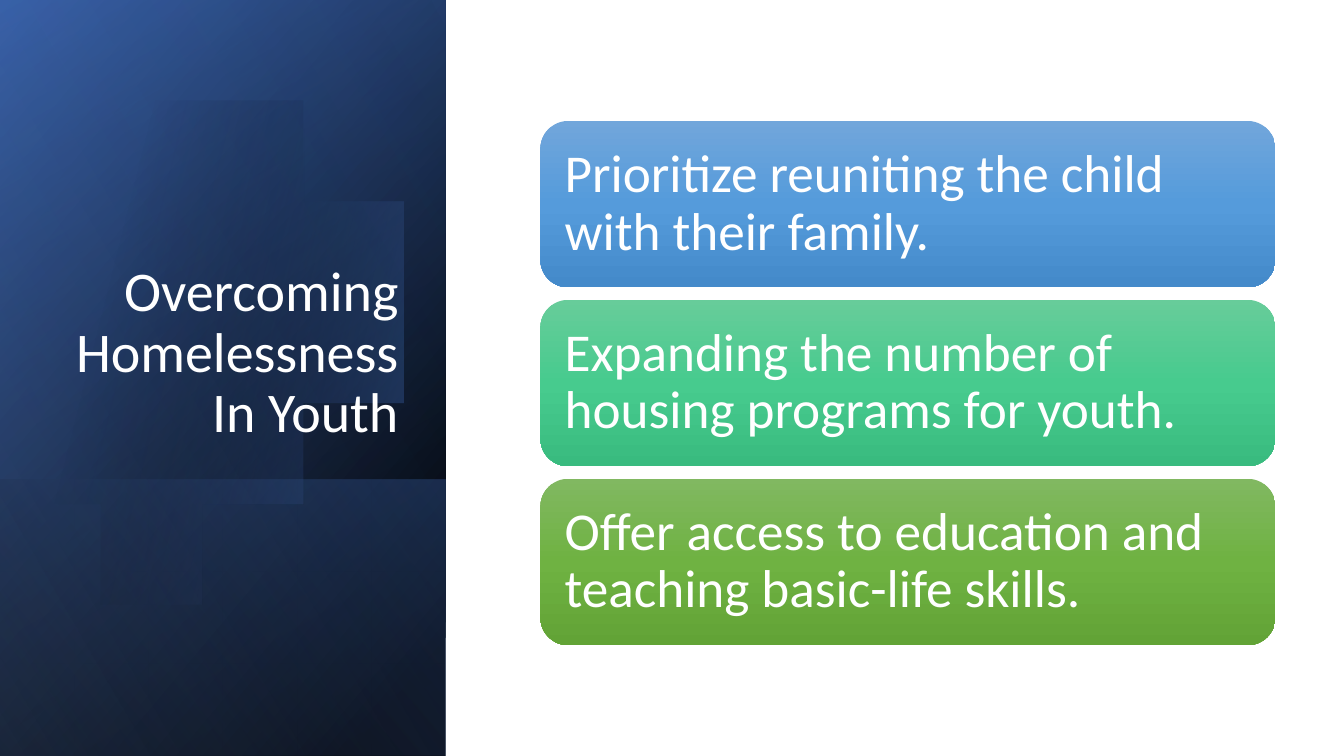
import math

import lxml.etree
import pptx
import pptx.dml.color
import pptx.enum.shapes
import pptx.enum.text
import pptx.oxml.ns
import pptx.util

SLIDE_W, SLIDE_H = 13.33, 7.5
SIDEBAR_W = 4.42
FONT = "Calibri"
WHITE = "FFFFFF"
SHAPES = pptx.enum.shapes.MSO_SHAPE
ALIGN = pptx.enum.text.PP_ALIGN
ANCHOR = pptx.enum.text.MSO_ANCHOR

CARD_LEFT, CARD_TOP, CARD_W, CARD_H = 5.36, 1.2, 7.29, 1.65
CARD_PITCH = 1.775
CARDS = [
    ("Prioritize reuniting the child with their family.",
     ("71A6DB", "559BDB", "448ACA")),
    ("Expanding the number of housing programs for youth.",
     ("67CC9A", "47CB8E", "39BB7F")),
    ("Offer access to education and teaching basic-life skills.",
     ("81B861", "6FB242", "62A336")),
]


def inches(*lengths):
    return [pptx.util.Inches(length) for length in lengths]


def rgb(color):
    return pptx.dml.color.RGBColor.from_string(color)


def set_gradient(sp, stops, angle):
    """Fill with (position %, colour, opacity %) stops; the angle runs clockwise."""
    qn = pptx.oxml.ns.qn
    sp.shadow.inherit = False
    sp.line.fill.background()
    sp.fill.gradient()
    sp.fill.gradient_angle = -angle % 360
    stop_list = sp._element.spPr.find(qn("a:gradFill")).find(qn("a:gsLst"))
    for stop in list(stop_list):
        stop_list.remove(stop)
    for position, color, opacity in stops:
        stop = lxml.etree.SubElement(stop_list, qn("a:gs"), pos=str(position * 1000))
        clr = lxml.etree.SubElement(stop, qn("a:srgbClr"), val=color)
        if opacity < 100:
            lxml.etree.SubElement(clr, qn("a:alpha"), val=str(opacity * 1000))


def set_text(sp, text, size, align, anchor, margins):
    tf = sp.text_frame
    tf.text = text
    tf.word_wrap = True
    tf.vertical_anchor = anchor
    tf.margin_left, tf.margin_top, tf.margin_right, tf.margin_bottom = inches(*margins)
    p = tf.paragraphs[0]
    p.alignment = align
    p.line_spacing = 0.9
    font = p.runs[0].font
    font.name, font.size = FONT, pptx.util.Pt(size)
    font.color.rgb = rgb(WHITE)


def add_sidebar_layer(slide, top, stops, angle):
    """Cover the sidebar from top to the slide's foot with a mirrored, turned rectangle."""
    height = SLIDE_H - top
    left = (SIDEBAR_W - height) / 2
    sp = slide.shapes.add_shape(
        SHAPES.RECTANGLE, *inches(left, top + (height - SIDEBAR_W) / 2, height, SIDEBAR_W))
    sp.rotation = 90
    sp._element.spPr.xfrm.set("flipH", "1")
    set_gradient(sp, stops, angle)


def add_clipped_circle(slide, cx, cy, radius, stops, angle):
    """Draw the part of a circle that lies right of the slide's left edge."""
    reach = math.acos(-cx / radius)
    steps = 120
    turns = [reach * (2 * i / steps - 1) for i in range(steps + 1)]
    points = [(cx + radius * math.cos(t), cy + radius * math.sin(t)) for t in turns]
    builder = slide.shapes.build_freeform(*points[0], scale=pptx.util.Inches(1))
    builder.add_line_segments(points[1:], close=True)
    set_gradient(builder.convert_to_shape(), stops, angle)


def add_title(slide, text):
    sp = slide.shapes.add_textbox(*inches(0.64, 1.84, 3.41, 2.62))
    set_text(sp, text, 40, ALIGN.RIGHT, ANCHOR.BOTTOM, (0, 0.05, 0.1, 0.05))


def add_card(slide, row, text, colors):
    sp = slide.shapes.add_shape(
        SHAPES.ROUNDED_RECTANGLE,
        *inches(CARD_LEFT, CARD_TOP + row * CARD_PITCH, CARD_W, CARD_H))
    set_gradient(sp, [(50 * i, color, 100) for i, color in enumerate(colors)], 90)
    set_text(sp, text, 38, ALIGN.LEFT, ANCHOR.MIDDLE, (0.16,) * 4)


def main():
    prs = pptx.Presentation()
    prs.slide_width, prs.slide_height = inches(SLIDE_W, SLIDE_H)
    slide = prs.slides.add_slide(prs.slide_layouts[6])

    add_sidebar_layer(slide, 0, [(8, "000000", 100), (100, "2F5597", 100)], 50)
    add_sidebar_layer(slide, 0, [(0, "000000", 0), (99, "4472C4", 46)], 30)
    add_sidebar_layer(slide, 4.76, [(2, "4472C4", 29), (100, "000000", 30)], 130)
    add_clipped_circle(slide, 1.44, 3.39, 2.29,
                       [(29, "000000", 0), (100, "4472C4", 43)], 14)
    add_sidebar_layer(slide, 0, [(0, "000000", 0), (99, "8FAADC", 11)], 120)

    add_title(slide, "Overcoming Homelessness In Youth")
    for row, (text, colors) in enumerate(CARDS):
        add_card(slide, row, text, colors)
    prs.save("out.pptx")


if __name__ == "__main__":
    main()
